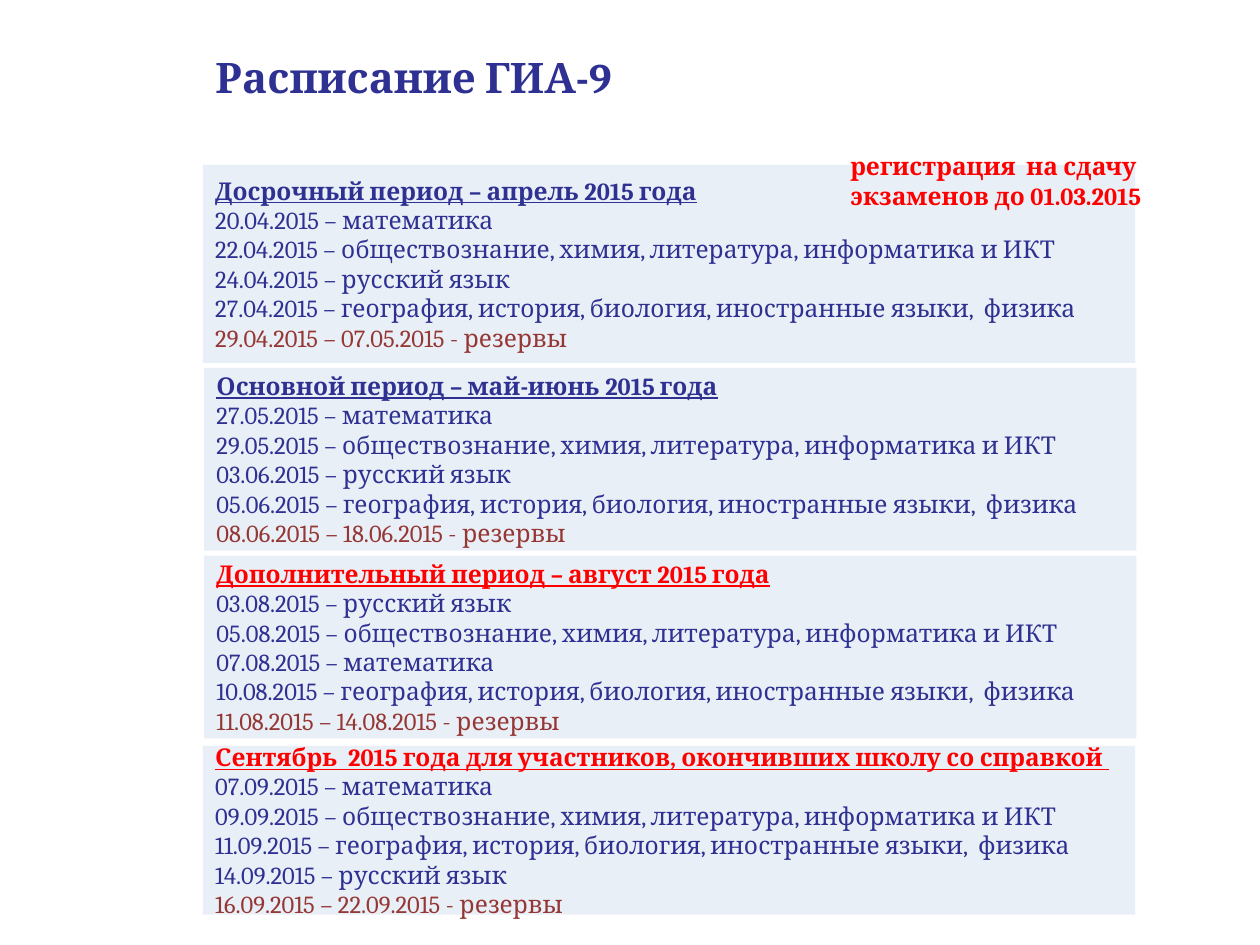
from lxml.etree import SubElement
from pptx import Presentation
from pptx.dml.color import RGBColor
from pptx.enum.shapes import MSO_SHAPE as Shape
from pptx.enum.text import MSO_ANCHOR as Anchor, PP_ALIGN as Align
from pptx.oxml.ns import qn
from pptx.util import Inches, Pt

FONT = "Cambria"
NAVY = RGBColor(0x2E, 0x31, 0x92)
RED = RGBColor(0xFF, 0x00, 0x00)
MAROON = RGBColor(0x95, 0x37, 0x35)
PALE_BLUE = RGBColor(0xB9, 0xCD, 0xE5)
PANEL_OPACITY = 31

TITLE = "Расписание ГИА-9"
NOTE = "регистрация  на сдачу экзаменов до 01.03.2015"

MATHS = "математика"
RUSSIAN = "русский язык"
SOCIAL = "обществознание, химия, литература, информатика и ИКТ"
GEOGRAPHY = "география, история, биология, иностранные языки,  физика"

# heading, heading colour, (left, top, height), exams, reserve days
PERIODS = [
    ("Досрочный период – апрель 2015 года", NAVY, (1.61, 1.31, 1.57),
     [("20.04.2015", MATHS), ("22.04.2015", SOCIAL),
      ("24.04.2015", RUSSIAN), ("27.04.2015", GEOGRAPHY)],
     "29.04.2015 – 07.05.2015"),
    ("Основной период – май-июнь 2015 года", NAVY, (1.62, 2.92, 1.45),
     [("27.05.2015", MATHS), ("29.05.2015", SOCIAL),
      ("03.06.2015", RUSSIAN), ("05.06.2015", GEOGRAPHY)],
     "08.06.2015 – 18.06.2015"),
    ("Дополнительный период – август 2015 года", RED, (1.62, 4.41, 1.45),
     [("03.08.2015", RUSSIAN), ("05.08.2015", SOCIAL),
      ("07.08.2015", MATHS), ("10.08.2015", GEOGRAPHY)],
     "11.08.2015 – 14.08.2015"),
    ("Сентябрь  2015 года для участников, окончивших школу со справкой ", RED,
     (1.61, 5.92, 1.34),
     [("07.09.2015", MATHS), ("09.09.2015", SOCIAL),
      ("11.09.2015", GEOGRAPHY), ("14.09.2015", RUSSIAN)],
     "16.09.2015 – 22.09.2015"),
]
PANEL_WIDTH = 7.4


def write(para, text, size=14, color=NAVY, bold=False, underline=False,
          align=Align.LEFT):
    para.alignment = align
    span = para.add_run()
    span.text = text
    font = span.font
    font.name, font.size, font.bold = FONT, Pt(size), bold
    font.underline = underline
    font.color.rgb = color
    return span


def set_frame(frame, anchor):
    frame.word_wrap = True
    frame.vertical_anchor = anchor
    frame.margin_left = frame.margin_right = Inches(0.1)
    frame.margin_top = frame.margin_bottom = Inches(0.05)


def add_text_shadow(span):
    """Put a soft shadow below the letters, in its place after the fill."""
    properties = span.font._element
    effects = SubElement(properties, qn("a:effectLst"))
    properties.find(qn("a:solidFill")).addnext(effects)
    shadow = SubElement(effects, qn("a:outerShdw"), blurRad="38100",
                        dist="38100", dir="2700000", algn="tl")
    black = SubElement(shadow, qn("a:srgbClr"), val="000000")
    SubElement(black, qn("a:alpha"), val="43000")


def add_title(slide):
    title = slide.shapes.title
    title.left, title.top = Inches(1.61), Inches(0.36)
    title.width, title.height = Inches(8.19), Inches(0.5)
    set_frame(title.text_frame, Anchor.TOP)
    span = write(title.text_frame.paragraphs[0], TITLE, size=24, bold=True)
    add_text_shadow(span)


def add_period(slide, heading, heading_color, place, exams, reserve):
    left, top, height = place
    panel = slide.shapes.add_shape(Shape.RECTANGLE, Inches(left), Inches(top),
                                   Inches(PANEL_WIDTH), Inches(height))
    panel.shadow.inherit = False
    panel.line.fill.background()
    panel.fill.solid()
    panel.fill.fore_color.rgb = PALE_BLUE
    tint = panel._element.spPr.find(qn("a:solidFill"))[0]
    SubElement(tint, qn("a:alpha"), val=str(PANEL_OPACITY * 1000))

    frame = panel.text_frame
    set_frame(frame, Anchor.MIDDLE)
    write(frame.paragraphs[0], heading, color=heading_color, bold=True,
          underline=True, align=Align.JUSTIFY)
    for date, subjects in exams:
        write(frame.add_paragraph(), f"{date} – {subjects}",
              align=Align.JUSTIFY)
    write(frame.add_paragraph(), f"{reserve} - резервы", color=MAROON,
          align=Align.JUSTIFY)


def add_note(slide):
    box = slide.shapes.add_textbox(Inches(6.65), Inches(1.33),
                                   Inches(3.23), Inches(0.21))
    set_frame(box.text_frame, Anchor.MIDDLE)
    write(box.text_frame.paragraphs[0], NOTE, color=RED, bold=True)


def main():
    deck = Presentation()
    deck.slide_width, deck.slide_height = Inches(10), Inches(7.5)
    slide = deck.slides.add_slide(deck.slide_layouts.get_by_name("Title Only"))
    add_title(slide)
    for period in PERIODS:
        add_period(slide, *period)
    add_note(slide)
    deck.save("out.pptx")


if __name__ == "__main__":
    main()
